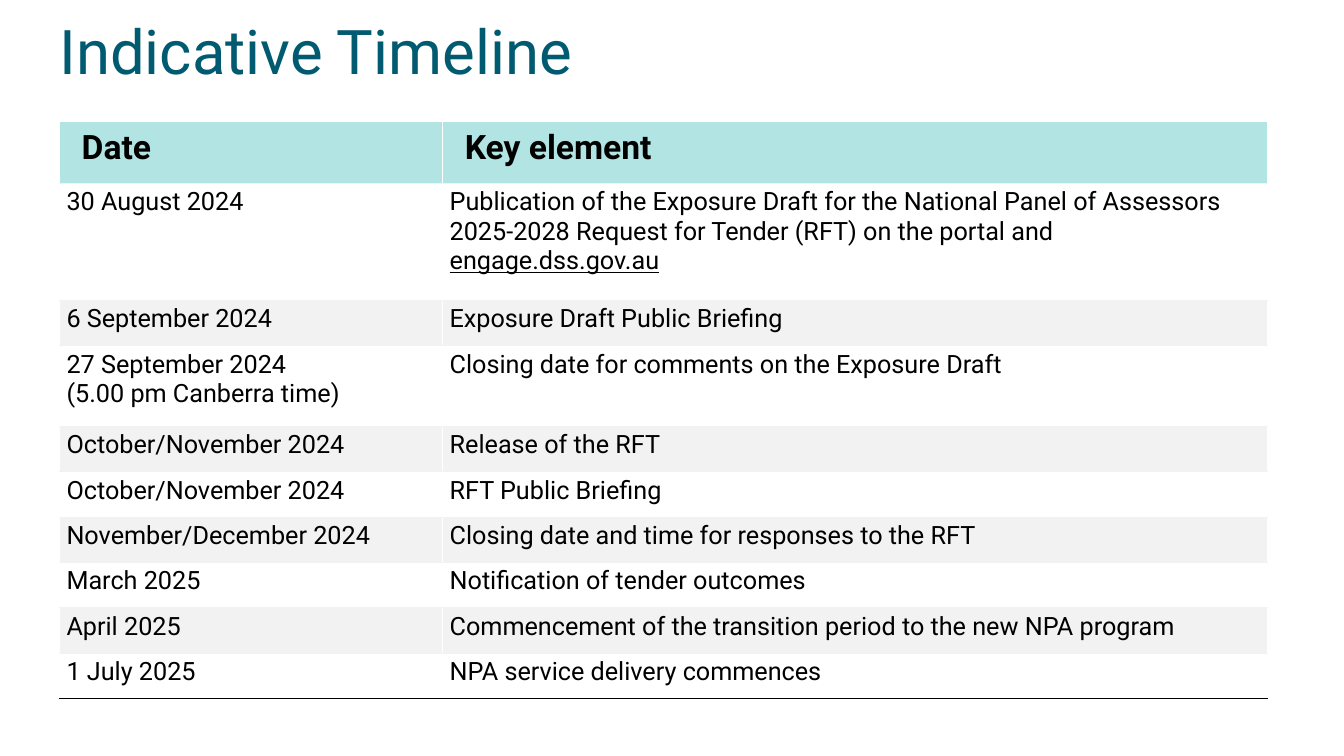
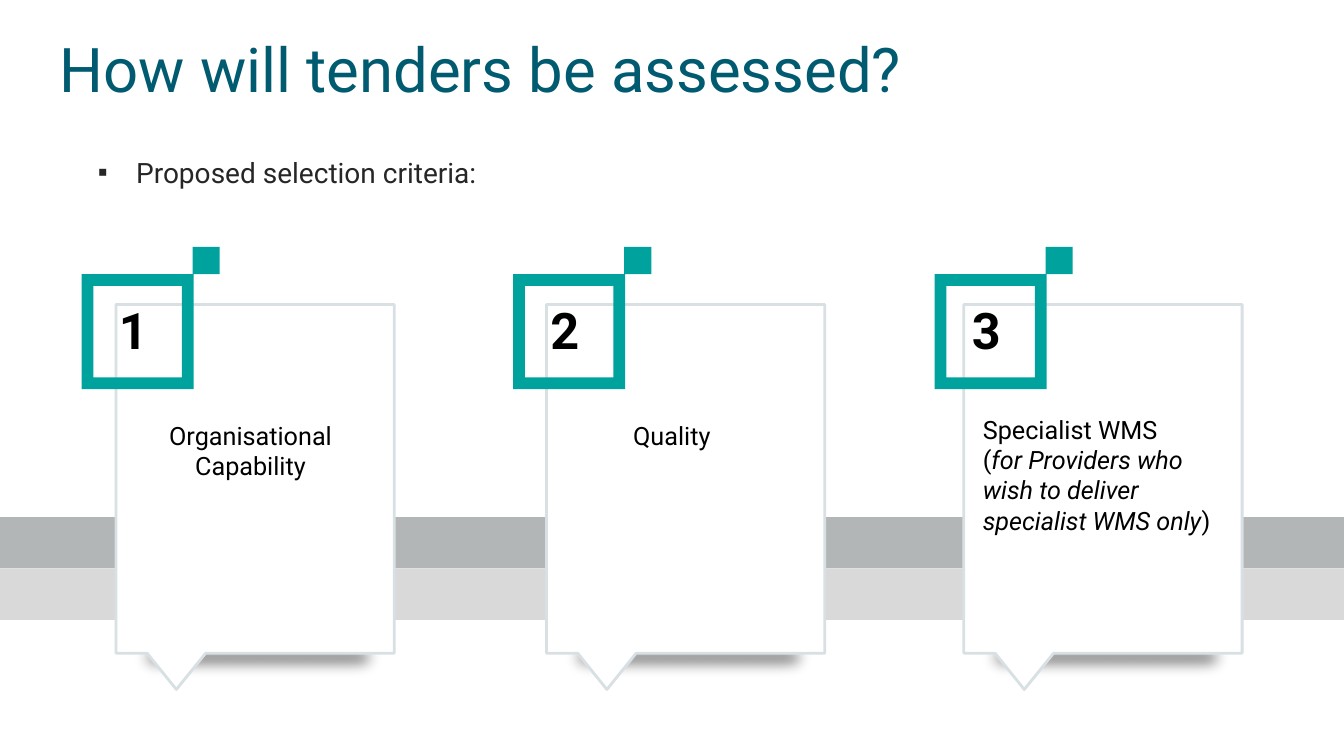
"""Builds the tender timeline and selection criteria slides."""
from lxml import etree
from pptx import Presentation
from pptx.dml.color import RGBColor
from pptx.enum.shapes import MSO_SHAPE
from pptx.enum.text import MSO_ANCHOR, MSO_AUTO_SIZE, PP_ALIGN
from pptx.oxml.ns import qn
from pptx.util import Inches, Pt

FONT = "Roboto"
COLOURS = {
    "title": "005A70", "text": "000000", "list": "262626", "header": "B1E4E3",
    "stripe": "F2F2F2", "white": "FFFFFF", "accent": "00A29E", "outline": "D9E0E4",
    "shadow": "0D0D0D", "upper band": "B3B6B7", "lower band": "D9D9D9",
}
TITLE_ONLY, TITLE_AND_BODY = 5, 1

TITLE_STYLE = {"size": Pt(44), "colour": COLOURS["title"]}
LIST_STYLE = {"size": Pt(20), "colour": COLOURS["list"]}
HEADER_STYLE = {"size": Pt(24), "bold": True}
TEXT_STYLE = {"size": Pt(18), "bold": False}
NUMBER_STYLE = {"size": Pt(36), "bold": True}
ITALIC = {"italic": True}
UNDERLINE = {"underline": True}

TIMELINE_TITLE = "Indicative Timeline"
TIMELINE_HEADER = ("Date", "Key element")
TIMELINE = [
    ("30 August 2024",
     [[("Publication of the Exposure Draft for the National Panel of Assessors "
        "2025-2028 Request for Tender (RFT) on the portal and ", {}),
       ("engage.dss.gov.au", UNDERLINE)]], 1.16),
    ("6 September 2024", "Exposure Draft Public Briefing", 0.45),
    ([[("27 September 2024", {})], [("(5.00 pm Canberra time)", {})]],
     "Closing date for comments on the Exposure Draft", 0.8),
    ("October/November 2024", "Release of the RFT", 0.45),
    ("October/November 2024", "RFT Public Briefing", 0.45),
    ("November/December 2024", "Closing date and time for responses to the RFT", 0.45),
    ("March 2025", "Notification of tender outcomes", 0.45),
    ("April 2025", "Commencement of the transition period to the new NPA program", 0.45),
    ("1 July 2025", "NPA service delivery commences", 0.45),
]
HEADER_HEIGHT = 0.6
COLUMN_WIDTHS = (3.8, 8.18)

CRITERIA_TITLE = "How will tenders be assessed?"
CRITERIA_LEAD = "Proposed selection criteria:"
CRITERIA = [
    {"card": 1.15, "badge": 0.81, "at": (1.3, 4.12, 2.37, 0.71),
     "align": PP_ALIGN.CENTER, "text": "Organisational Capability"},
    {"card": 5.42, "badge": 5.09, "at": (5.51, 4.12, 2.37, 0.4),
     "align": PP_ALIGN.CENTER, "text": "Quality "},
    {"card": 9.56, "badge": 9.27, "at": (9.65, 4.06, 2.6, 1.31),
     "align": PP_ALIGN.LEFT,
     "text": [[("Specialist WMS", {})],
              [("(", {}),
               ("for Providers who wish to deliver specialist WMS only", ITALIC),
               (")", {})]]},
]
BAND_SPANS = ((0, 5.42), (8.18, 13.33))
BAND_TOPS = {"upper band": 5.13, "lower band": 5.64}
BAND_HEIGHT = 0.51
CARD_TOP = 3.02
CARD_OUTLINE = ((0, 0), (2.76, 0), (2.76, 3.46), (0.89, 3.46),
                (0.6, 3.82), (0.31, 3.46), (0, 3.46))


def rgb(colour):
    return RGBColor.from_string(colour)


def box(*lengths):
    return [Inches(length) for length in lengths]


def add_xml(parent, tag, **attributes):
    return etree.SubElement(
        parent, qn(tag), {key: str(value) for key, value in attributes.items()})


def set_font(font, style):
    values = {"name": FONT, **style}
    colour = values.pop("colour", COLOURS["text"])
    for key, value in values.items():
        setattr(font, key, value)
    font.color.rgb = rgb(colour)


def write(frame, content, style, align=PP_ALIGN.LEFT):
    paragraphs = [[(content, {})]] if isinstance(content, str) else content
    for index, runs in enumerate(paragraphs):
        paragraph = frame.add_paragraph() if index else frame.paragraphs[0]
        paragraph.alignment = align
        for text, extra in runs:
            run = paragraph.add_run()
            run.text = text
            set_font(run.font, {**style, **extra})


def add_text(slide, at, content, style, align=PP_ALIGN.LEFT):
    frame = slide.shapes.add_textbox(*box(*at)).text_frame
    frame.word_wrap = True
    write(frame, content, style, align)


def place(placeholder, at):
    placeholder.left, placeholder.top, placeholder.width, placeholder.height = box(*at)
    frame = placeholder.text_frame
    frame.word_wrap = True
    frame.auto_size = MSO_AUTO_SIZE.NONE
    return frame


def add_titled_slide(deck, layout, title, at):
    slide = deck.slides.add_slide(deck.slide_layouts[layout])
    frame = place(slide.shapes.title, at)
    frame.vertical_anchor = MSO_ANCHOR.BOTTOM
    for side in ("left", "top", "right", "bottom"):
        setattr(frame, f"margin_{side}", 0)
    write(frame, title, TITLE_STYLE)
    return slide


def paint(shape, fill, line=None):
    shape.shadow.inherit = False
    shape.fill.solid()
    shape.fill.fore_color.rgb = rgb(fill)
    if line:
        shape.line.color.rgb = rgb(line)
        shape.line.width = Pt(2)
    else:
        shape.line.fill.background()
    return shape


def add_block(shapes, at, fill, kind=MSO_SHAPE.RECTANGLE):
    return paint(shapes.add_shape(kind, *box(*at)), fill)


def set_borders(cell, horizontal, bottom):
    properties = cell._tc.get_or_add_tcPr()
    sides = {"a:lnL": COLOURS["white"], "a:lnR": COLOURS["white"],
             "a:lnT": horizontal, "a:lnB": bottom}
    for index, (tag, colour) in enumerate(sides.items()):
        border = add_xml(properties, tag, w=Pt(1))
        add_xml(add_xml(border, "a:solidFill"), "a:srgbClr", val=colour)
        properties.insert(index, border)


def add_timeline(slide):
    rows = [(*TIMELINE_HEADER, HEADER_HEIGHT), *TIMELINE]
    heights = [row[-1] for row in rows]
    table = slide.shapes.add_table(
        len(rows), len(COLUMN_WIDTHS),
        *box(0.59, 1.22, sum(COLUMN_WIDTHS), sum(heights))).table
    table.first_row = table.horz_banding = False
    for column, width in zip(table.columns, COLUMN_WIDTHS):
        column.width = Inches(width)
    for number, (*contents, height) in enumerate(rows):
        table.rows[number].height = Inches(height)
        header, last = number == 0, number == len(rows) - 1
        horizontal = COLOURS["header" if header else "stripe"]
        for column, content in enumerate(contents):
            cell = table.cell(number, column)
            cell.margin_left = Inches(0.22 if header else 0.07)
            cell.margin_right = Inches(0.07)
            cell.margin_top = cell.margin_bottom = Inches(0.05 if header else 0.04)
            write(cell.text_frame, content, HEADER_STYLE if header else TEXT_STYLE)
            if number % 2 == 0:
                cell.fill.solid()
                cell.fill.fore_color.rgb = rgb(horizontal)
            else:
                cell.fill.background()
            if last:
                cell.fill.background()
            set_borders(cell, horizontal, COLOURS["text"] if last else horizontal)


def add_lead(slide):
    frame = place(slide.placeholders[1], (0.58, 1.46, 9.87, 0.44))
    paragraph = frame.paragraphs[0]
    properties = paragraph._p.get_or_add_pPr()
    properties.set("marL", str(Inches(0.67)))
    properties.set("indent", str(Inches(-0.38)))
    add_xml(properties, "a:buChar", char="▪")
    paragraph.line_spacing = 1.1
    paragraph.space_before = Pt(0)
    write(frame, CRITERIA_LEAD, LIST_STYLE)


def add_card(slide, left):
    shapes = slide.shapes.add_group_shape().shapes
    shadow = add_block(shapes, (left + 0.08, 6.24, 2.66, 0.56), COLOURS["shadow"])
    colour = shadow._element.spPr.find(qn("a:solidFill")).find(qn("a:srgbClr"))
    add_xml(colour, "a:alpha", val=54000)
    effects = shadow._element.spPr.find(qn("a:effectLst"))
    add_xml(effects, "a:softEdge", rad=Pt(12.5))
    start, *corners = [box(left + x, CARD_TOP + y) for x, y in CARD_OUTLINE]
    builder = shapes.build_freeform(*start)
    builder.add_line_segments(corners, close=True)
    paint(builder.convert_to_shape(), COLOURS["white"], COLOURS["outline"])


def add_badge(slide, left, number):
    shapes = slide.shapes.add_group_shape().shapes
    frame = add_block(shapes, (left, 2.72, 1.11, 1.14), COLOURS["accent"], MSO_SHAPE.FRAME)
    frame.adjustments[0] = 0.105
    add_block(shapes, (left + 1.1, 2.45, 0.27, 0.27), COLOURS["accent"])
    add_text(slide, (left + 0.27, 2.92, 0.58, 0.71), str(number), NUMBER_STYLE)


def add_criteria(slide):
    for band, top in BAND_TOPS.items():
        for left, right in BAND_SPANS:
            add_block(slide.shapes, (left, top, right - left, BAND_HEIGHT), COLOURS[band])
    for number, criterion in enumerate(CRITERIA, 1):
        add_card(slide, criterion["card"])
        add_badge(slide, criterion["badge"], number)
        add_text(slide, criterion["at"], criterion["text"], TEXT_STYLE, criterion["align"])


def main():
    deck = Presentation()
    deck.slide_width, deck.slide_height = box(13.33, 7.5)
    timeline = add_titled_slide(deck, TITLE_ONLY, TIMELINE_TITLE, (0.59, 0.3, 8.61, 0.56))
    add_timeline(timeline)
    criteria = add_titled_slide(deck, TITLE_AND_BODY, CRITERIA_TITLE, (0.59, 0.3, 8.72, 0.74))
    add_lead(criteria)
    add_criteria(criteria)
    deck.save("out.pptx")


if __name__ == "__main__":
    main()
